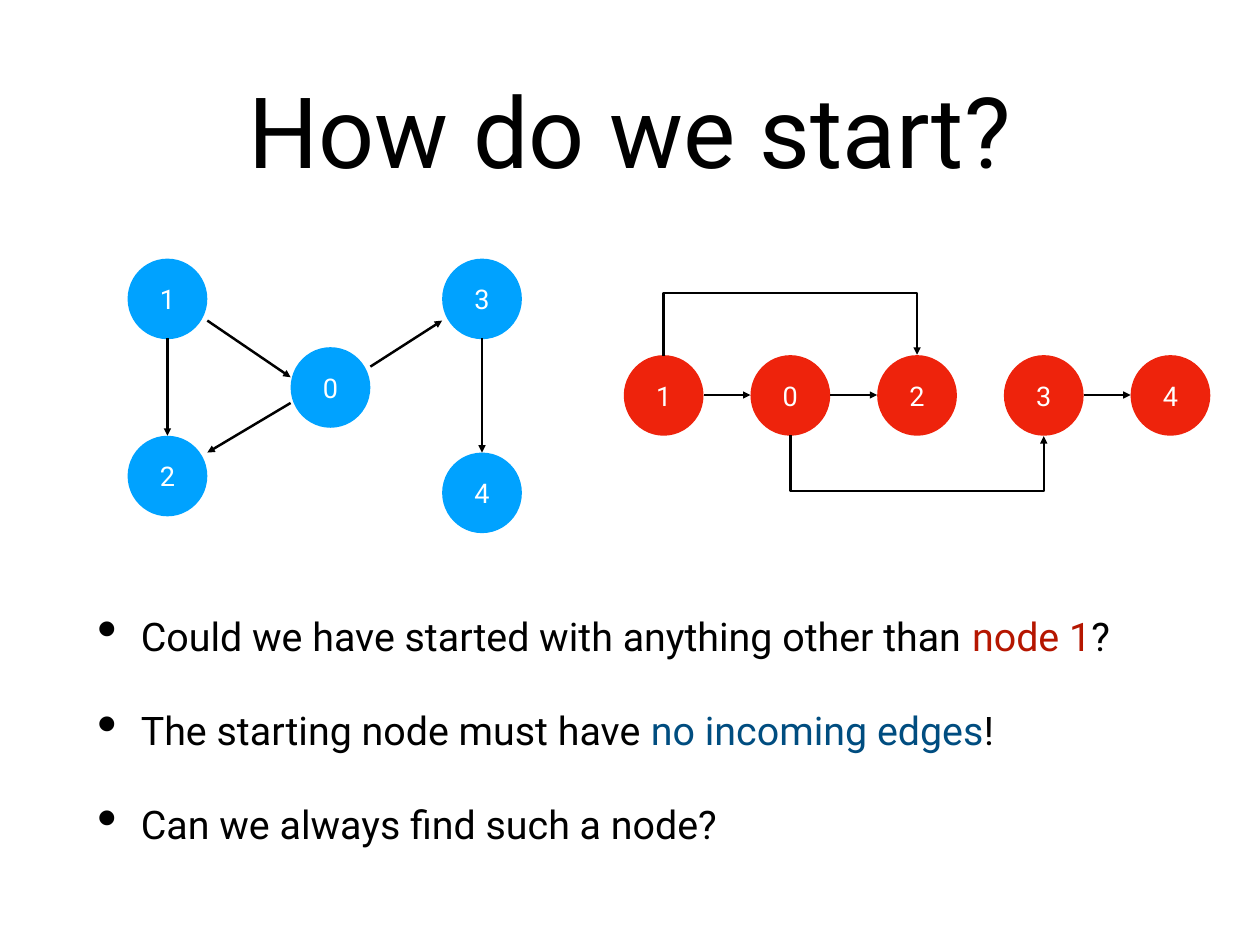
from lxml.etree import SubElement
from pptx import Presentation
from pptx.dml.color import RGBColor
from pptx.enum.shapes import MSO_CONNECTOR as Connector, MSO_SHAPE as Shape
from pptx.enum.text import MSO_ANCHOR as Anchor, PP_ALIGN as Align
from pptx.oxml.ns import qn
from pptx.util import Emu, Pt

PX = 9144  # 100 px to the inch
FONT = "Roboto"
BLACK, WHITE, RED, BLUE = "000000", "FFFFFF", "EE230C", "00A2FF"
DARK_RED, DARK_BLUE = "B51600", "004D80"
NODE_WIDTH, NODE_HEIGHT = 90, 91
SEQUENCE = "10234"
SEQUENCE_STEP = 143
INSET = 6

# Node label: left and top within the graph box
GRAPH_NODES = {"1": (0, 0), "2": (0, 200), "0": (184, 100), "3": (355, 0), "4": (355, 219)}
# Source, offset from its centre, target, offset from its centre
GRAPH_EDGES = [
    ("1", (45, 25), "0", (-45, -11)),
    ("1", (0, 45), "2", (0, -45)),
    ("0", (-45, 18), "2", (45, -26)),
    ("0", (45, -23), "3", (-45, 25)),
    ("3", (0, 45), "4", (0, -45)),
]
BULLETS = [
    [("Could we have started with anything other than ", BLACK), ("node 1", DARK_RED), ("?", BLACK)],
    [("The starting node must have ", BLACK), ("no incoming edges", DARK_BLUE), ("!", BLACK)],
    [("Can we always find such a node?", BLACK)],
]


def px(*lengths):
    return [Emu(round(length * PX)) for length in lengths]


def color(hex_string):
    return RGBColor.from_string(hex_string)


def set_attributes(target, values):
    for name, value in values.items():
        setattr(target, name, value)


def prepare_frame(frame):
    inset = Emu(INSET * PX)
    set_attributes(frame, {
        "word_wrap": True, "vertical_anchor": Anchor.MIDDLE,
        "margin_left": inset, "margin_right": inset,
        "margin_top": inset, "margin_bottom": inset,
    })
    return frame


def add_run(paragraph, text, size, text_color):
    run = paragraph.add_run()
    run.text = text
    set_attributes(run.font, {"name": FONT, "size": Pt(size)})
    run.font.color.rgb = color(text_color)


def add_title(slide, box):
    frame = prepare_frame(slide.shapes.add_textbox(*px(*box)).text_frame)
    paragraph = frame.paragraphs[0]
    paragraph.alignment = Align.CENTER
    add_run(paragraph, "How do we start?", 80, BLACK)


def add_bullets(slide, box):
    frame = prepare_frame(slide.shapes.add_textbox(*px(*box)).text_frame)
    for index, runs in enumerate(BULLETS):
        paragraph = frame.add_paragraph() if index else frame.paragraphs[0]
        set_attributes(paragraph, {"line_spacing": 0.9, "space_before": Pt(42 if index else 0)})
        properties = paragraph._p.get_or_add_pPr()
        indent = 49 * PX
        properties.set("marL", str(indent))
        properties.set("indent", str(-indent))
        SubElement(properties, qn("a:buSzPct"), val="145000")
        SubElement(properties, qn("a:buChar"), char="•")
        for text, text_color in runs:
            add_run(paragraph, text, 32, text_color)


def add_node(slide, label, left, top, fill):
    shape = slide.shapes.add_shape(Shape.OVAL, *px(left, top, NODE_WIDTH, NODE_HEIGHT))
    shape.shadow.inherit = False
    shape.fill.solid()
    shape.fill.fore_color.rgb = color(fill)
    shape.line.fill.background()
    paragraph = prepare_frame(shape.text_frame).paragraphs[0]
    paragraph.alignment = Align.CENTER
    add_run(paragraph, label, 22, WHITE)


def add_arrow(slide, start, end, kind=Connector.STRAIGHT):
    connector = slide.shapes.add_connector(kind, *px(*start, *end))
    connector.line.width = Pt(2)
    connector.line.color.rgb = color(BLACK)
    SubElement(connector.line._get_or_add_ln(), qn("a:tailEnd"), type="triangle")
    SubElement(connector._element.spPr, qn("a:effectLst"))
    return connector


def add_detour(slide, start_x, end_x, y, depth, above):
    """Elbow arrow between two nodes, running depth px above or below y."""
    # A turned elbow one px wide: its adjustment is then the depth in px.
    middle, half = (start_x + end_x) / 2, (end_x - start_x) / 2
    turn = half if above else -half
    connector = add_arrow(slide, (middle + 0.5, y + turn), (middle - 0.5, y - turn), Connector.ELBOW)
    properties = connector._element.spPr
    properties.find(qn("a:xfrm")).set("rot", str((90 if above else 270) * 60000))
    adjustments = properties.find(qn("a:prstGeom")).find(qn("a:avLst"))
    SubElement(adjustments, qn("a:gd"), name="adj1", fmla=f"val {depth * 100000}")


def add_graph(slide, box):
    left, top = box[:2]

    def site(label, offset):
        x, y = GRAPH_NODES[label]
        return left + x + NODE_WIDTH // 2 + offset[0], top + y + NODE_HEIGHT // 2 + offset[1]

    for label, (x, y) in GRAPH_NODES.items():
        add_node(slide, label, left + x, top + y, BLUE)
    for source, source_offset, target, target_offset in GRAPH_EDGES:
        add_arrow(slide, site(source, source_offset), site(target, target_offset))


def add_sequence(slide, box):
    """Nodes in one row, with detours reaching the top and bottom of the box."""
    left, top, width, height = box
    row_top = top + (height - NODE_HEIGHT) // 2 + 4
    row_bottom = row_top + NODE_HEIGHT
    lefts = {label: left + index * SEQUENCE_STEP for index, label in enumerate(SEQUENCE)}
    centres = {label: x + NODE_WIDTH // 2 for label, x in lefts.items()}
    for label, x in lefts.items():
        add_node(slide, label, x, row_top, RED)
    middle = row_top + NODE_HEIGHT // 2
    for source, target in ("10", "02", "34"):
        add_arrow(slide, (lefts[source] + NODE_WIDTH, middle), (lefts[target], middle))
    add_detour(slide, centres["1"], centres["2"], row_top, row_top - top, True)
    add_detour(slide, centres["0"], centres["3"], row_bottom, top + height - row_bottom, False)


def main():
    presentation = Presentation()
    presentation.slide_width, presentation.slide_height = px(1422, 1067)
    slide = presentation.slides.add_slide(presentation.slide_layouts[6])
    add_title(slide, (104, 28, 1214, 236))
    add_bullets(slide, (104, 684, 1214, 287))
    add_sequence(slide, (704, 329, 662, 227))
    add_graph(slide, (144, 292, 445, 310))
    presentation.save("out.pptx")


if __name__ == "__main__":
    main()
